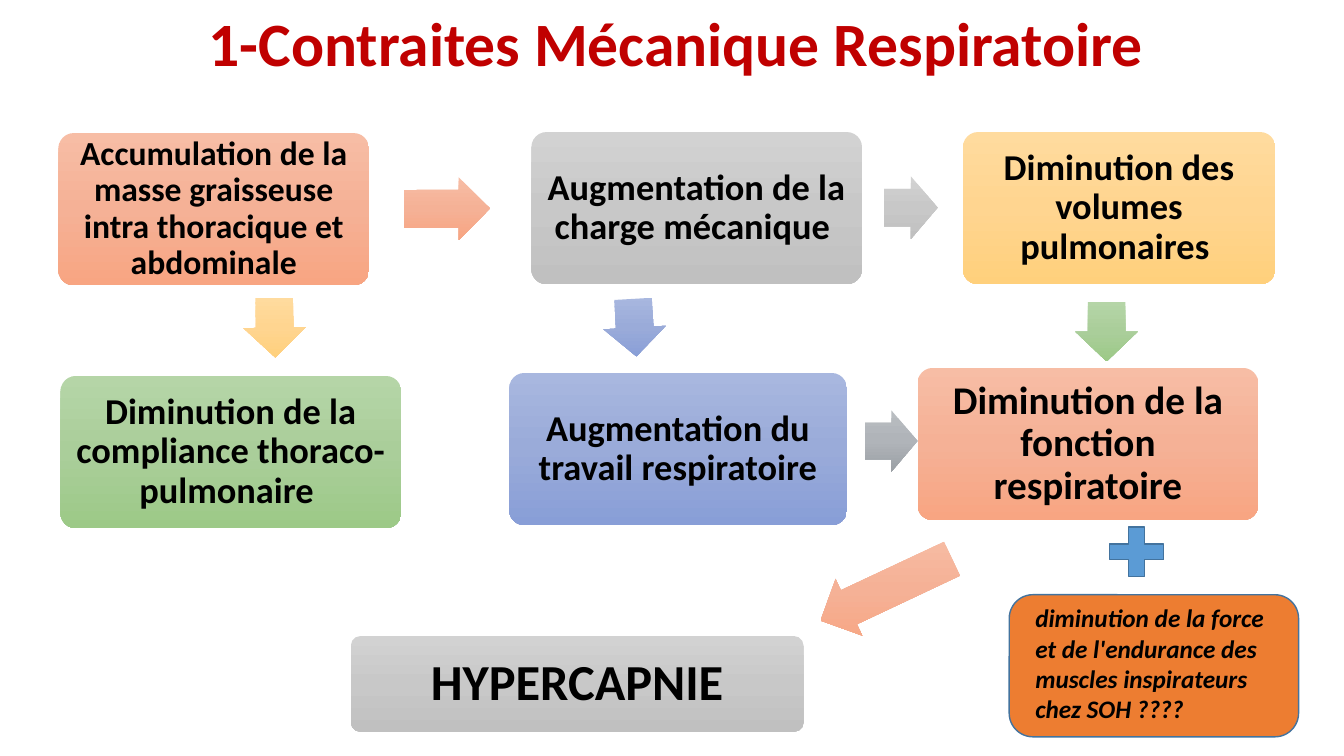
from copy import deepcopy
from dataclasses import dataclass

from pptx import Presentation
from pptx.dml.color import RGBColor
from pptx.enum.shapes import MSO_SHAPE as Preset
from pptx.enum.text import MSO_ANCHOR as Anchor, PP_ALIGN as Align
from pptx.oxml.ns import qn
from pptx.shapes.autoshape import Shape
from pptx.util import Pt

PX = 9144  # EMU per px, 100 px to the inch
FONT = "Calibri"
COLORS = {
    "title": "C00000",
    "text": "000000",
    "question": "ED7D31",
    "plus": "5B9BD5",
    "outline": "43739E",
}
GRADIENTS = {
    "salmon": ("F7BDA5", "F5B196", "F8A582"),
    "grey": ("D2D2D2", "C8C8C8", "C0C0C0"),
    "yellow": ("FFDB9E", "FFD590", "FFD07C"),
    "blue": ("A8B7DF", "9AABD9", "889ED7"),
    "green": ("B5D5A7", "AACE9A", "9CC987"),
    "slate": ("B9BDC1", "B0B4B9", "9BA0A5"),
}


@dataclass(frozen=True)
class Area:
    left: int
    top: int
    width: int
    height: int

    def emu(self) -> tuple[int, int, int, int]:
        return self.left * PX, self.top * PX, self.width * PX, self.height * PX


@dataclass(frozen=True)
class Step:
    text: str
    area: Area
    gradient: str
    size: int = 26


@dataclass(frozen=True)
class Arrow:
    area: Area
    gradient: str
    rotation: float = 0


STEPS = [
    Step("Accumulation de la masse graisseuse intra thoracique et abdominale",
         Area(58, 132, 308, 151), "salmon", 24),
    Step("Augmentation de la charge mécanique ", Area(527, 131, 328, 151), "grey"),
    Step("Diminution des volumes pulmonaires ", Area(955, 131, 310, 151), "yellow"),
    Step("Diminution de la compliance thoraco-pulmonaire ",
         Area(60, 373, 338, 151), "green"),
    Step("Augmentation du travail respiratoire", Area(505, 370, 335, 151), "blue"),
    Step("Diminution de la fonction respiratoire",
         Area(910, 365, 338, 151), "salmon", 28),
    Step("HYPERCAPNIE", Area(348, 631, 449, 95), "grey", 36),
]
ARROWS = [
    Arrow(Area(401, 176, 85, 62), "salmon", 359.8),
    Arrow(Area(877, 175, 53, 62), "grey"),
    Arrow(Area(243, 294, 59, 62), "yellow", 88.9),
    Arrow(Area(601, 294, 57, 62), "blue", 86.7),
    Arrow(Area(1068, 298, 59, 62), "green", 89.9),
    Arrow(Area(858, 407, 52, 61), "slate"),
    Arrow(Area(807, 554, 144, 62), "salmon", 154.8),
]

prs = Presentation()
prs.slide_width, prs.slide_height = 1333 * PX, 750 * PX
slide = prs.slides.add_slide(prs.slide_layouts[6])


def rgb(name: str) -> RGBColor:
    return RGBColor.from_string(COLORS[name])


def add_preset(preset: Preset, area: Area) -> Shape:
    shape = slide.shapes.add_shape(preset, *area.emu())
    shape.shadow.inherit = False
    return shape


def fill_gradient(shape: Shape, name: str) -> None:
    """Three stops from top to bottom, whatever the rotation; no outline."""
    shape.line.fill.background()
    fill = shape.fill
    fill.gradient()
    fill.gradient_angle = 270
    grad = shape._element.spPr.find(qn("a:gradFill"))
    grad.set("rotWithShape", "0")
    stop_list = grad.find(qn("a:gsLst"))
    stop_list.insert(1, deepcopy(stop_list[0]))
    for index, (stop, color) in enumerate(zip(fill.gradient_stops, GRADIENTS[name])):
        stop.position = index / 2
        stop.color.rgb = RGBColor.from_string(color)


def fill_outlined(shape: Shape, color: str) -> None:
    shape.fill.solid()
    shape.fill.fore_color.rgb = rgb(color)
    shape.line.color.rgb = rgb("outline")
    shape.line.width = Pt(1)


def write(shape: Shape, text: str, size: int, margins: tuple[int, int, int, int],
          color: str = "text", align: Align = Align.LEFT, anchor: Anchor = Anchor.TOP,
          spacing: float = 1.0, italic: bool = False) -> None:
    frame = shape.text_frame
    frame.word_wrap = True
    frame.vertical_anchor = anchor
    (frame.margin_left, frame.margin_top,
     frame.margin_right, frame.margin_bottom) = (m * PX for m in margins)
    paragraph = frame.paragraphs[0]
    paragraph.text = text
    paragraph.alignment = align
    paragraph.line_spacing = spacing
    font = paragraph.font
    font.name, font.size, font.bold, font.italic = FONT, Pt(size), True, italic
    font.color.rgb = rgb(color)


def add_step(step: Step) -> None:
    box = add_preset(Preset.ROUNDED_RECTANGLE, step.area)
    box.adjustments[0] = 0.1
    fill_gradient(box, step.gradient)
    margin = round(step.size * 0.42)
    write(box, step.text, step.size, (margin,) * 4, align=Align.CENTER,
          anchor=Anchor.MIDDLE, spacing=0.9)


def add_arrow(arrow: Arrow) -> None:
    shape = add_preset(Preset.RIGHT_ARROW, arrow.area)
    shape.adjustments[0], shape.adjustments[1] = 0.6, 0.5
    shape.rotation = arrow.rotation
    fill_gradient(shape, arrow.gradient)


# Title
title = slide.shapes.add_textbox(*Area(197, 0, 968, 84).emu())
write(title, "1-Contraites Mécanique Respiratoire", 44, (10, 5, 10, 5), color="title")

# Chain of causes
for step in STEPS:
    add_step(step)
for arrow in ARROWS:
    add_arrow(arrow)

# Additional factor
question = add_preset(Preset.ROUNDED_RECTANGLE, Area(1001, 590, 287, 141))
fill_outlined(question, "question")
write(question, "diminution de la force et de l'endurance des muscles inspirateurs chez SOH ????",
      18, (19, 1, 15, 1), italic=True)
plus = add_preset(Preset.MATH_PLUS, Area(1091, 514, 73, 67))
fill_outlined(plus, "plus")

prs.save("out.pptx")
